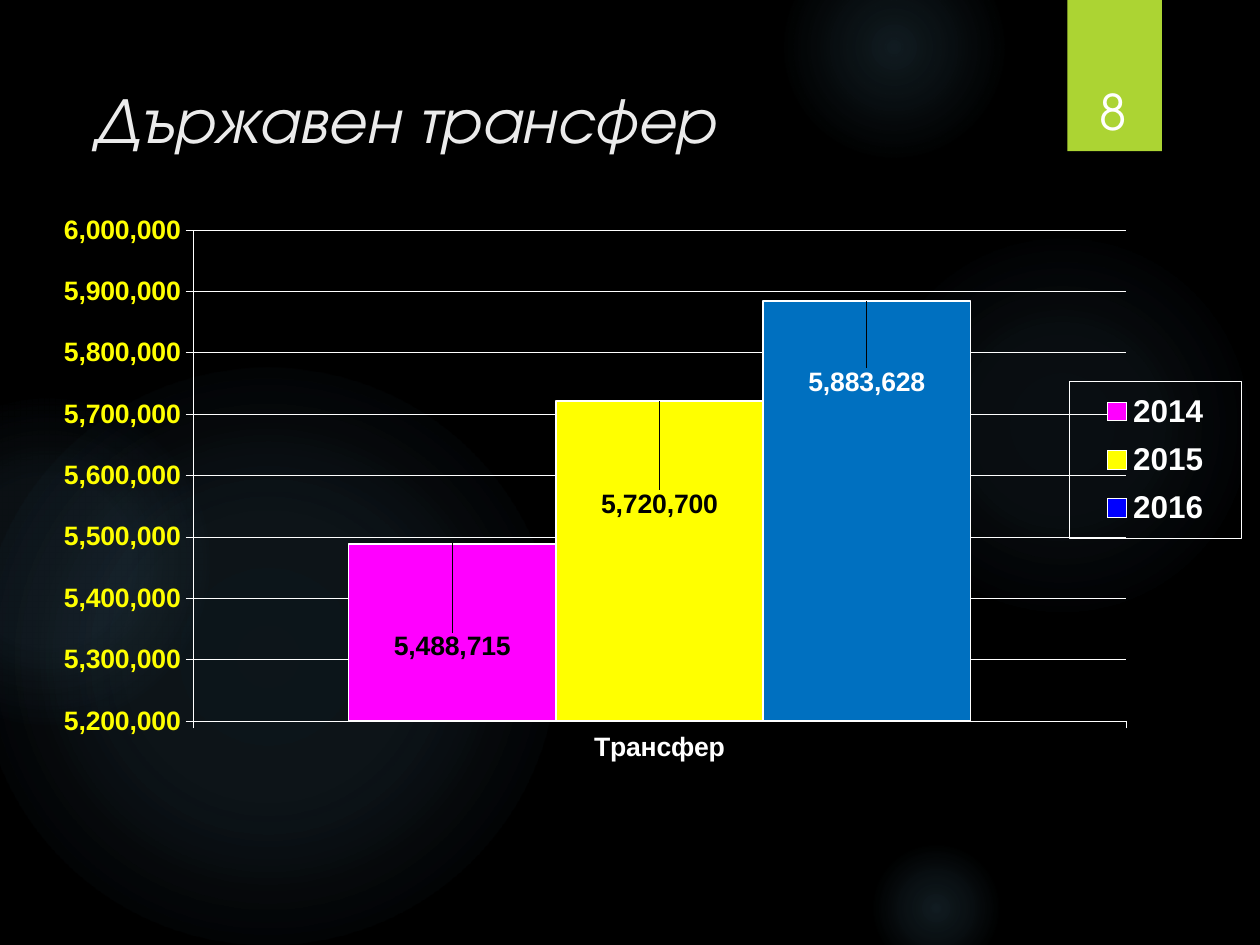
import pptx
import pptx.chart.data
import pptx.dml.color
import pptx.enum.chart
import pptx.enum.shapes
import pptx.enum.text
import pptx.oxml
import pptx.oxml.ns
import pptx.util

Pt = pptx.util.Pt
XL = pptx.enum.chart

# Content
TITLE = "Държавен трансфер"
PAGE = "8"
CATEGORY = "Трансфер"
# year, value, bar colour, legend colour, label colour, label drop
TRANSFERS = [
    ("2014", 5488715, "pink", "pink", "black", 0.22),
    ("2015", 5720700, "yellow", "yellow", "black", 0.22),
    ("2016", 5883628, "azure", "blue", "white", 0.18),
]
COLORS = {
    "black": "000000", "white": "FFFFFF", "title": "EBEBEB", "green": "ACD433",
    "glow": "7AC4F0", "pink": "FF00FF", "yellow": "FFFF00", "azure": "0070C0",
    "blue": "0000FF",
}
# left, top, diameter, (position, opacity) stops in percent
GLOWS = [
    (496, 132, 222, [(0, 7), (36, 6), (69, 0)]),
    (448, -36, 126, [(0, 14), (36, 7), (73, 0)]),
    (496, 480, 78, [(0, 14), (36, 7), (66, 0)]),
    (-12, 210, 330, [(0, 11), (36, 10), (75, 0)]),
    (-66, 228, 186, [(0, 8), (36, 8), (72, 0)]),
]
PLOT_AREA = (0.124, 0.025, 0.776, 0.883)
LEGEND_AREA = (0.853, 0.297, 0.143, 0.282)
HEADING_FONT, CHART_FONT = "TeX Gyre Adventor", "Arial"
A_NS = pptx.oxml.ns.nsdecls("a")
C_NS = pptx.oxml.ns.nsdecls("c")


def rgb(name):
    return pptx.dml.color.RGBColor.from_string(COLORS[name])


def set_font(font, face, size, color, bold=False, italic=False):
    font.name, font.size, font.bold, font.italic = face, Pt(size), bold, italic
    font.color.rgb = rgb(color)


def set_line(line, color, width):
    line.color.rgb = rgb(color)
    line.width = Pt(width)


def plain_shape(kind, left, top, width, height):
    shape = slide.shapes.add_shape(kind, Pt(left), Pt(top), Pt(width), Pt(height))
    shape.shadow.inherit = False
    shape.line.fill.background()
    return shape


def text_box(text, left, top, width, height, size, color, align, anchor, italic=False):
    box = slide.shapes.add_textbox(Pt(left), Pt(top), Pt(width), Pt(height))
    frame = box.text_frame
    frame.word_wrap = True
    frame.vertical_anchor = anchor
    frame.margin_left = frame.margin_right = Pt(5)
    frame.margin_top = frame.margin_bottom = Pt(3)
    paragraph = frame.paragraphs[0]
    paragraph.text = text
    paragraph.alignment = align
    set_font(paragraph.font, HEADING_FONT, size, color, italic=italic)


def manual_layout(area, target=""):
    x, y, w, h = area
    return pptx.oxml.parse_xml(
        f'<c:layout {C_NS}><c:manualLayout>{target}<c:xMode val="edge"/><c:yMode val="edge"/>'
        f'<c:x val="{x}"/><c:y val="{y}"/><c:w val="{w}"/><c:h val="{h}"/>'
        '</c:manualLayout></c:layout>')


prs = pptx.Presentation()
prs.slide_width, prs.slide_height = Pt(720), Pt(540)
slide = prs.slides.add_slide(prs.slide_layouts[6])
slide.background.fill.solid()
slide.background.fill.fore_color.rgb = rgb("black")

# Background glows
for left, top, size, stops in GLOWS:
    glow = plain_shape(pptx.enum.shapes.MSO_SHAPE.OVAL, left, top, size, size)
    glow.fill.background()
    stop_xml = "".join(
        f'<a:gs pos="{pos * 1000}"><a:srgbClr val="{COLORS["glow"]}">'
        f'<a:alpha val="{alpha * 1000}"/></a:srgbClr></a:gs>' for pos, alpha in stops)
    gradient = pptx.oxml.parse_xml(
        f'<a:gradFill {A_NS}><a:gsLst>{stop_xml}</a:gsLst><a:path path="circle">'
        '<a:fillToRect l="50000" t="50000" r="50000" b="50000"/></a:path></a:gradFill>')
    no_fill = glow._element.spPr.find(pptx.oxml.ns.qn("a:noFill"))
    glow._element.spPr.replace(no_fill, gradient)

# Page tab with its soft shadow
tab = plain_shape(pptx.enum.shapes.MSO_SHAPE.RECTANGLE, 610, 0, 54, 86.4)
tab.fill.solid()
tab.fill.fore_color.rgb = rgb("green")
tab._element.spPr.find(pptx.oxml.ns.qn("a:effectLst")).append(pptx.oxml.parse_xml(
    f'<a:outerShdw {A_NS} blurRad="{Pt(3)}" dist="{Pt(2)}" dir="5400000" rotWithShape="0">'
    f'<a:srgbClr val="{COLORS["black"]}"><a:alpha val="45000"/></a:srgbClr></a:outerShdw>'))

# Page number and title
ALIGN, ANCHOR = pptx.enum.text.PP_ALIGN, pptx.enum.text.MSO_ANCHOR
text_box(PAGE, 611.3, 23, 49.7, 60.5, 28, "white", ALIGN.CENTER, ANCHOR.BOTTOM)
text_box(TITLE, 48.2, 41.8, 534, 51.8, 37, "title", ALIGN.LEFT, ANCHOR.TOP, italic=True)

# Chart
data = pptx.chart.data.CategoryChartData(number_format="#,##0")
data.categories = [CATEGORY]
for year, value, *_ in TRANSFERS:
    data.add_series(year, [value])
chart = slide.shapes.add_chart(
    XL.XL_CHART_TYPE.COLUMN_CLUSTERED, Pt(25.2), Pt(123.1), Pt(686.9), Pt(318.2), data).chart
chart.has_title = False
set_font(chart.font, CHART_FONT, 15.2, "white", bold=True)
plot = chart.plots[0]
plot.gap_width, plot.overlap, plot.vary_by_categories = 150, 0, False
plot_area = chart._chartSpace.chart.plotArea
for old_layout in plot_area.findall(pptx.oxml.ns.qn("c:layout")):
    plot_area.remove(old_layout)
plot_area.insert(0, manual_layout(PLOT_AREA, '<c:layoutTarget val="inner"/>'))

# Bars and their labels
for series, (_, _, bar, key, ink, drop) in zip(plot.series, TRANSFERS):
    point = series.points[0]
    for part, color in ((series, key), (point, bar)):
        part.format.fill.solid()
        part.format.fill.fore_color.rgb = rgb(color)
        set_line(part.format.line, "white", 1)
    label = point.data_label
    set_font(label.font, CHART_FONT, 15.2, ink, bold=True)
    label.position = XL.XL_LABEL_POSITION.OUTSIDE_END
    series.data_labels.show_value = True
    labels = series.data_labels._element
    labels.find(pptx.oxml.ns.qn("c:dLbl")).insert(1, pptx.oxml.parse_xml(
        f'<c:layout {C_NS}><c:manualLayout><c:x val="0"/><c:y val="{drop}"/>'
        '</c:manualLayout></c:layout>'))

# Axes
for axis, color in ((chart.category_axis, "white"), (chart.value_axis, "yellow")):
    set_font(axis.tick_labels.font, CHART_FONT, 15.2, color, bold=True)
    set_line(axis.format.line, "white", 0.25)
    axis.major_tick_mark = XL.XL_TICK_MARK.OUTSIDE
chart.category_axis.tick_label_position = XL.XL_TICK_LABEL_POSITION.LOW
amounts = chart.value_axis
amounts.minimum_scale, amounts.maximum_scale, amounts.major_unit = 5200000, 6000000, 100000
amounts.tick_labels.number_format = "#,##0"
amounts.tick_labels.number_format_is_linked = False
set_line(amounts.major_gridlines.format.line, "white", 0.25)

# Legend
chart.has_legend = True
legend = chart.legend
legend.position = XL.XL_LEGEND_POSITION.RIGHT
legend.include_in_layout = False
set_font(legend.font, CHART_FONT, 18, "white", bold=True)
for old_layout in legend._element.findall(pptx.oxml.ns.qn("c:layout")):
    legend._element.remove(old_layout)
legend._element.insert(1, manual_layout(LEGEND_AREA))
legend._element.find(pptx.oxml.ns.qn("c:txPr")).addprevious(pptx.oxml.parse_xml(
    f'<c:spPr {C_NS} {A_NS}><a:noFill/><a:ln w="{Pt(0.25)}"><a:solidFill>'
    f'<a:srgbClr val="{COLORS["white"]}"/></a:solidFill></a:ln></c:spPr>'))

prs.save("out.pptx")
